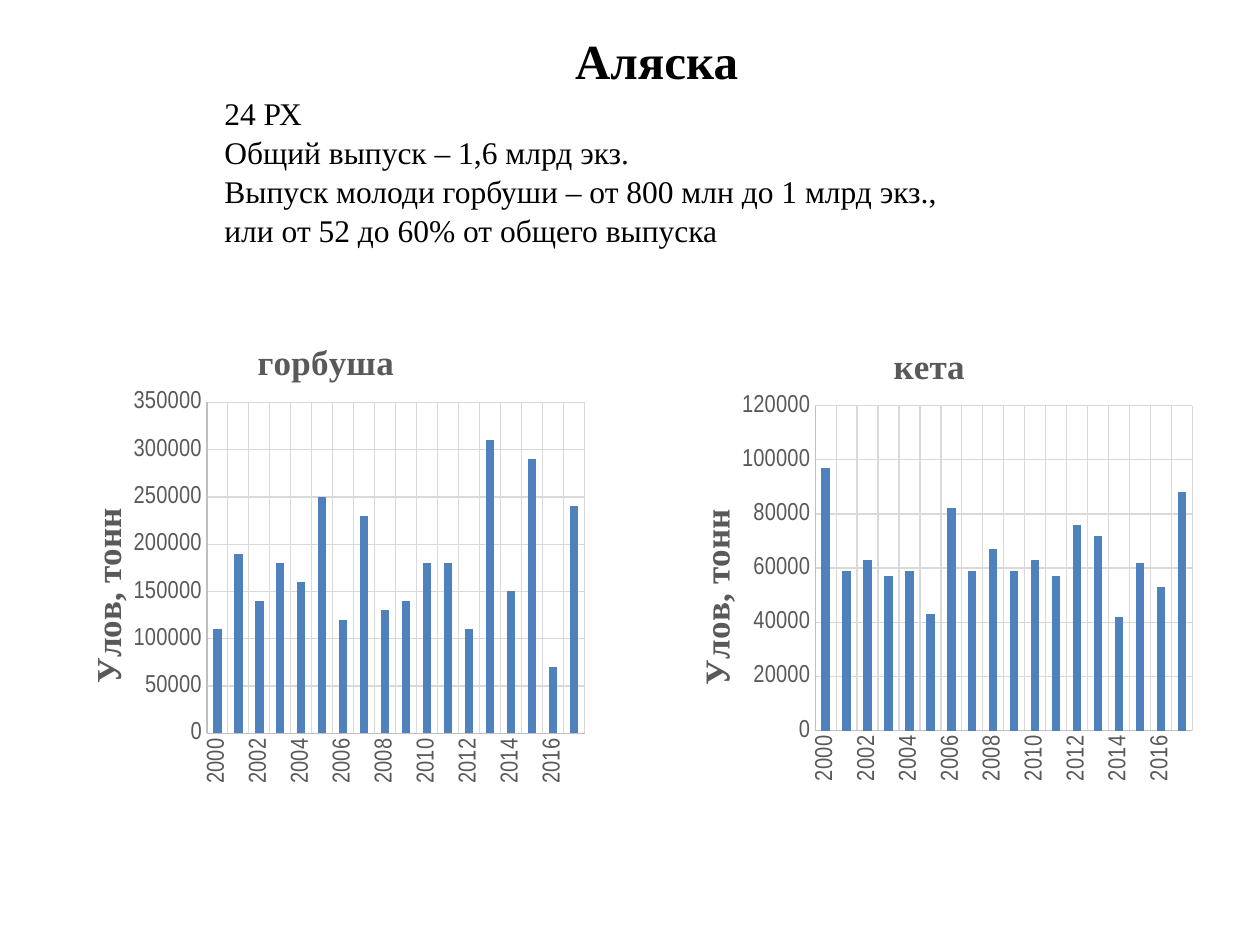
import pptx
import pptx.chart.data
import pptx.dml.color
import pptx.enum.chart
import pptx.enum.text
import pptx.oxml
import pptx.oxml.ns
import pptx.util
from pptx.util import Cm, Pt

BLACK = pptx.dml.color.RGBColor(0x00, 0x00, 0x00)
GREY_TEXT = pptx.dml.color.RGBColor(0x59, 0x59, 0x59)
AXIS_GREY = pptx.dml.color.RGBColor(0xBF, 0xBF, 0xBF)
GRID_GREY = pptx.dml.color.RGBColor(0xD9, 0xD9, 0xD9)
BAR_BLUE = pptx.dml.color.RGBColor(0x4F, 0x81, 0xBD)
SERIF = "Times New Roman"
NARROW = "Arial Narrow"
qn = pptx.oxml.ns.qn


def set_font(font, name, size, color, bold=False):
    font.name = name
    font.size = Pt(size)
    font.bold = bold
    font.color.rgb = color


def set_layout(parent, position, **fractions):
    for old in parent.findall(qn("c:layout")):
        parent.remove(old)
    inner = '<c:layoutTarget val="inner"/>' if "w" in fractions else ""
    modes = "".join(f'<c:{key}Mode val="edge"/>' for key in "xy")
    values = "".join(f'<c:{key} val="{value}"/>' for key, value in fractions.items())
    parent.insert(position, pptx.oxml.parse_xml(
        f'<c:layout {pptx.oxml.ns.nsdecls("c")}><c:manualLayout>'
        f"{inner}{modes}{values}</c:manualLayout></c:layout>"))


prs = pptx.Presentation()
prs.slide_width = Cm(25.4)
prs.slide_height = Cm(19.05)
slide = prs.slides.add_slide(prs.slide_layouts[1])

region = slide.shapes.title
region.left, region.top, region.width, region.height = Cm(10.77), Cm(0.48), Cm(4.93), Cm(1.45)
region.text_frame.auto_size = pptx.enum.text.MSO_AUTO_SIZE.NONE
region_line = region.text_frame.paragraphs[0]
region_line.alignment = pptx.enum.text.PP_ALIGN.CENTER
region_name = region_line.add_run()
region_name.text = "Аляска"
set_font(region_name.font, SERIF, 28, BLACK, True)

releases = slide.placeholders[1]
releases.left, releases.top, releases.width, releases.height = Cm(4.27), Cm(1.73), Cm(15.42), Cm(3.33)
releases.text_frame.auto_size = pptx.enum.text.MSO_AUTO_SIZE.NONE
facts = [
    "24 РХ",
    "Общий выпуск – 1,6 млрд экз.",
    "Выпуск молоди горбуши – от 800 млн до 1 млрд экз., или от 52 до 60% от общего выпуска",
]
for index, fact in enumerate(facts):
    line = releases.text_frame.paragraphs[0] if index == 0 else releases.text_frame.add_paragraph()
    line.space_before = Pt(0)
    line.line_spacing = 1.04
    properties = line._p.get_or_add_pPr()
    properties.set("marL", "0")
    properties.set("indent", "0")
    properties.append(pptx.oxml.parse_xml(f'<a:buNone {pptx.oxml.ns.nsdecls("a")}/>'))
    fact_run = line.add_run()
    fact_run.text = fact
    set_font(fact_run.font, SERIF, 18, BLACK)

years = [str(year) for year in range(2000, 2018)]
pink_catch = [110, 190, 140, 180, 160, 250, 120, 230, 130, 140, 180, 180, 110, 310, 150, 290, 70, 240]
chum_catch = [97, 59, 63, 57, 59, 43, 82, 59, 67, 59, 63, 57, 76, 72, 42, 62, 53, 88]
species = [
    ("горбуша", pink_catch, 350000, 50000, 0.38, (0.81, 6.12, 11.2, 9.96)),
    ("кета", chum_catch, 120000, 20000, 0.43, (13.08, 6.22, 11.18, 9.78)),
]
for name, thousand_tonnes, top_value, step, title_x, box in species:
    data = pptx.chart.data.CategoryChartData(number_format="0")
    data.categories = years
    data.add_series("Series 1", [value * 1000 for value in thousand_tonnes])
    chart = slide.shapes.add_chart(
        pptx.enum.chart.XL_CHART_TYPE.COLUMN_CLUSTERED, *map(Cm, box), data).chart
    set_font(chart.font, SERIF, 10, BLACK)
    chart.has_legend = False
    chart.has_title = True
    plot = chart.plots[0]
    plot.gap_width = 150
    plot.vary_by_categories = False
    bars = plot.series[0].format.fill
    bars.solid()
    bars.fore_color.rgb = BAR_BLUE

    catch_axis = chart.value_axis
    catch_axis.minimum_scale = 0
    catch_axis.maximum_scale = top_value
    catch_axis.major_unit = step
    catch_axis.has_title = True
    catch_axis.tick_labels.number_format = "0"
    catch_axis.tick_labels.number_format_is_linked = False
    for axis in (chart.category_axis, catch_axis):
        axis.major_tick_mark = pptx.enum.chart.XL_TICK_MARK.NONE
        axis.minor_tick_mark = pptx.enum.chart.XL_TICK_MARK.NONE
        axis.has_major_gridlines = True
        set_font(axis.tick_labels.font, NARROW, 14, GREY_TEXT)
        for stroke, color in ((axis.format.line, AXIS_GREY), (axis.major_gridlines.format.line, GRID_GREY)):
            stroke.color.rgb = color
            stroke.width = Pt(0.75)
    year_labels = chart.category_axis._element.find(qn("c:txPr")).find(qn("a:bodyPr"))
    year_labels.set("rot", "-5400000")
    year_labels.set("vert", "horz")

    for heading, text, x, y in (
        (chart.chart_title, name, title_x, 0.06),
        (catch_axis.axis_title, "Улов, тонн", 0.07, 0.4),
    ):
        heading_run = heading.text_frame.paragraphs[0].add_run()
        heading_run.text = text
        set_font(heading_run.font, SERIF, 20, GREY_TEXT, True)
        set_layout(heading._element, 1, x=x, y=y)
    catch_turn = catch_axis.axis_title.text_frame._txBody.find(qn("a:bodyPr"))
    catch_turn.set("rot", "-5400000")
    catch_turn.set("vert", "horz")
    set_layout(chart._chartSpace.chart.plotArea, 0, x=0.3, y=0.2, w=0.68, h=0.67)

prs.save("out.pptx")
